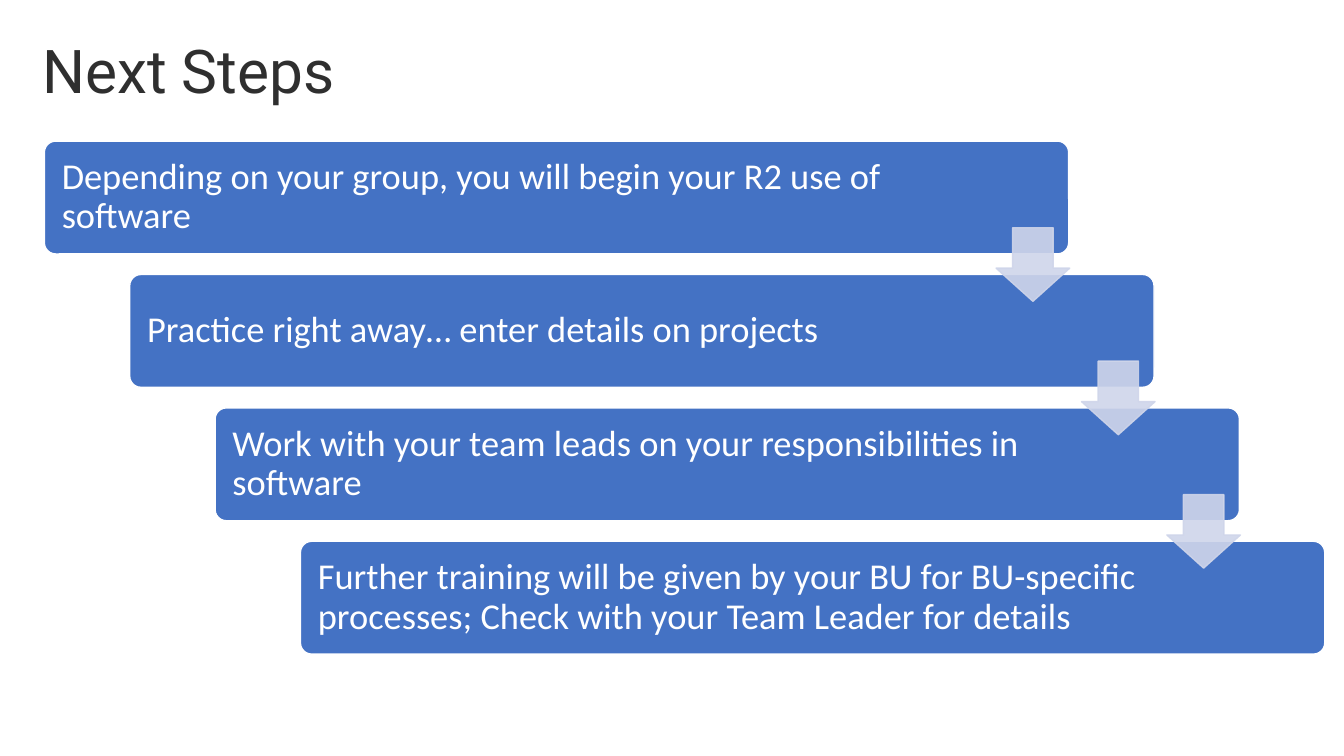
import pptx
import pptx.util
import pptx.dml.color
import pptx.enum.shapes
import pptx.enum.text
import pptx.oxml
import pptx.oxml.ns
from dataclasses import dataclass

Inches = pptx.util.Inches
Pt = pptx.util.Pt
Shapes = pptx.enum.shapes.MSO_SHAPE
Anchor = pptx.enum.text.MSO_ANCHOR
Align = pptx.enum.text.PP_ALIGN


@dataclass(frozen=True)
class Theme:
    title_color: str = "2F2F2F"
    bar_color: str = "4472C4"
    arrow_color: str = "CFD5EA"
    white: str = "FFFFFF"
    title_font: str = "Roboto"
    body_font: str = "Calibri"
    title_size: float = 43.1
    body_size: float = 26


THEME = Theme()
STEPS = [
    "Depending on your group, you will begin your R2 use of software",
    "Practice right away… enter details on projects",
    "Work with your team leads on your responsibilities in software",
    "Further training will be given by your BU for BU-specific "
    "processes; Check with your Team Leader for details",
]


def rgb(color):
    return pptx.dml.color.RGBColor.from_string(color)


def write(frame, text, font, size, color):
    para = frame.paragraphs[0]
    para.alignment = Align.LEFT
    para.line_spacing = 0.9
    span = para.add_run()
    span.text = text
    span.font.name = font
    span.font.size = Pt(size)
    span.font.color.rgb = rgb(color)


def set_alpha(fill, percent):
    """Make a solid fill partly transparent."""
    for color in fill.iter(pptx.oxml.ns.qn("a:srgbClr")):
        alpha = color.makeelement(pptx.oxml.ns.qn("a:alpha"), {"val": str(percent * 1000)})
        color.append(alpha)


def add_block(page, kind, box, adjustments, fill, line):
    block = page.shapes.add_shape(kind, *(Inches(length) for length in box))
    block.shadow.inherit = False
    for index, value in enumerate(adjustments):
        block.adjustments[index] = value
    block.fill.solid()
    block.fill.fore_color.rgb = rgb(fill)
    block.line.color.rgb = rgb(line)
    block.line.width = Pt(1)
    return block


def add_title(page, left, top, width, height):
    box = page.shapes.add_textbox(Inches(left), Inches(top), Inches(width), Inches(height))
    box.text_frame.word_wrap = False
    box.text_frame.auto_size = pptx.enum.text.MSO_AUTO_SIZE.SHAPE_TO_FIT_TEXT
    write(box.text_frame, "Next Steps", THEME.title_font, THEME.title_size, THEME.title_color)


def add_staircase(page, left, top, width, height):
    """Step bars running down to the right, joined by arrows."""
    bar_width, bar_height, arrow_size = 0.8 * width, 0.22 * height, 0.73
    gaps = len(STEPS) - 1
    step_x = (width - bar_width) / gaps
    step_y = (height - bar_height) / gaps
    corners = [(left + i * step_x, top + i * step_y) for i in range(len(STEPS))]

    # Bars
    for text, (x, y) in zip(STEPS, corners):
        bar = add_block(page, Shapes.ROUNDED_RECTANGLE, (x, y, bar_width, bar_height),
                        [0.1], THEME.bar_color, THEME.white)
        frame = bar.text_frame
        frame.word_wrap = True
        frame.vertical_anchor = Anchor.MIDDLE
        frame.margin_left = Inches(0.14)
        frame.margin_right = Inches(1.71)
        write(frame, text, THEME.body_font, THEME.body_size, THEME.white)

    # Arrows over the lower right corner of every bar but the last
    for x, y in corners[:-1]:
        box = (x + bar_width - arrow_size + 0.01, y + 0.86, arrow_size, arrow_size)
        arrow = add_block(page, Shapes.DOWN_ARROW, box, [0.55, 0.45],
                          THEME.arrow_color, THEME.arrow_color)
        set_alpha(arrow.fill._xPr, 90)


def main():
    deck = pptx.Presentation()
    deck.slide_width, deck.slide_height = Inches(13.33), Inches(7.5)
    page = deck.slides.add_slide(deck.slide_layouts[6])
    add_title(page, 0.32, 0.36, 3.15, 0.75)
    add_staircase(page, 0.44, 1.4, 12.7, 5.09)
    deck.save("out.pptx")


if __name__ == "__main__":
    main()
